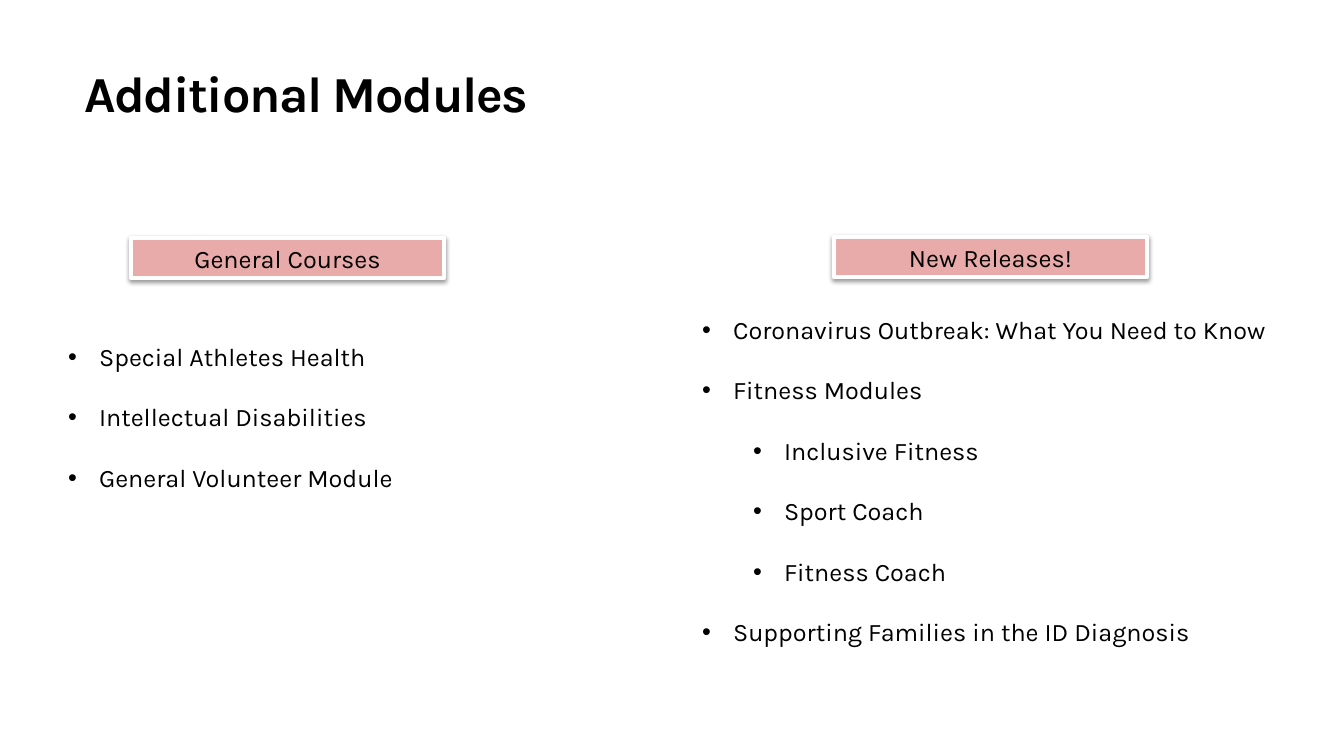
"""Builds the Additional Modules slide with two labelled course lists."""
from lxml.etree import SubElement
from pptx import Presentation
from pptx.dml.color import RGBColor as Rgb
from pptx.enum.shapes import MSO_SHAPE as Shape
from pptx.enum.text import MSO_ANCHOR as Anchor, MSO_AUTO_SIZE as AutoSize, PP_ALIGN as Align
from pptx.oxml.ns import qn
from pptx.util import Emu, Pt

EMU_PER_PX = 914400 / 100.8
COLORS = {"text": "000000", "label": "E9AAAA", "border": "FFFFFF", "shadow": "000000"}
BODY_FONT = {"name": "Karla", "size": Pt(18), "bold": False}
TITLE_FONT = {"name": "Karla", "size": Pt(36), "bold": True}
BULLET_HANG = 31
LEVEL_INDENTS = [31, 82]
COLUMNS = [
    ("General Courses", (131, 238), (58, 306, 591, 194), [
        ("Special Athletes Health", 0),
        ("Intellectual Disabilities", 0),
        ("General Volunteer Module", 0),
    ]),
    ("New Releases!", (834, 237), (692, 279, 615, 377), [
        ("Coronavirus Outbreak: What You Need to Know", 0),
        ("Fitness Modules", 0),
        ("Inclusive Fitness", 1),
        ("Sport Coach", 1),
        ("Fitness Coach", 1),
        ("Supporting Families in the ID Diagnosis", 0),
    ]),
]


def px(length):
    return Emu(round(length * EMU_PER_PX))


def set_all(target, values):
    for name, value in values.items():
        setattr(target, name, value)


def place(box, left, top, width, height):
    set_all(box, {"left": px(left), "top": px(top), "width": px(width), "height": px(height)})


def add_span(para, text, font):
    span = para.add_run()
    span.text = text
    set_all(span.font, font)
    span.font.color.rgb = Rgb.from_string(COLORS["text"])
    return span


def fill_title(box, text):
    place(box, 80, 40, 1036, 115)
    frame = box.text_frame
    set_all(frame, {"vertical_anchor": Anchor.MIDDLE, "word_wrap": True,
                    "auto_size": AutoSize.NONE})
    set_all(frame, {f"margin_{side}": px(4) for side in ("left", "top", "right", "bottom")})
    para = frame.paragraphs[0]
    set_all(para, {"alignment": Align.LEFT, "line_spacing": Pt(36)})
    span = add_span(para, text, TITLE_FONT)
    span.font._element.set("spc", "-100")


def add_shadow(shape):
    shape.shadow.inherit = False
    effects = shape._element.spPr.find(qn("a:effectLst"))
    shadow = SubElement(effects, qn("a:outerShdw"), blurRad=str(Pt(3.1)), dist=str(Pt(1.6)),
                        dir="5400000", rotWithShape="0")
    color = SubElement(shadow, qn("a:srgbClr"), val=COLORS["shadow"])
    SubElement(color, qn("a:alpha"), val="38000")


def add_label(slide, text, left, top):
    label = slide.shapes.add_shape(Shape.RECTANGLE, px(left), px(top), px(313), px(40))
    label.fill.solid()
    label.fill.fore_color.rgb = Rgb.from_string(COLORS["label"])
    label.line.color.rgb = Rgb.from_string(COLORS["border"])
    label.line.width = Pt(3)
    add_shadow(label)
    para = label.text_frame.paragraphs[0]
    para.alignment = Align.CENTER
    add_span(para, text, BODY_FONT)


def fill_list(box, area, items):
    place(box, *area)
    frame = box.text_frame
    set_all(frame, {"word_wrap": True, "auto_size": AutoSize.NONE,
                    "vertical_anchor": Anchor.TOP})
    for number, (text, level) in enumerate(items):
        para = frame.add_paragraph() if number else frame.paragraphs[0]
        set_all(para, {"level": level, "line_spacing": 2.0,
                       "space_before": Pt(0), "space_after": Pt(0)})
        properties = para._p.get_or_add_pPr()
        properties.set("marL", str(px(LEVEL_INDENTS[level])))
        properties.set("indent", str(-px(BULLET_HANG)))
        SubElement(properties, qn("a:buFont"), typeface="Arial")
        SubElement(properties, qn("a:buChar"), char="•")
        add_span(para, text, BODY_FONT)


def main():
    deck = Presentation()
    set_all(deck, {"slide_width": px(1344), "slide_height": px(756)})
    page = deck.slides.add_slide(deck.slide_layouts.get_by_name("Two Content"))
    fill_title(page.shapes.title, "Additional Modules")
    for index, (heading, corner, area, items) in enumerate(COLUMNS, start=1):
        add_label(page, heading, *corner)
        fill_list(page.placeholders[index], area, items)
    deck.save("out.pptx")


if __name__ == "__main__":
    main()
